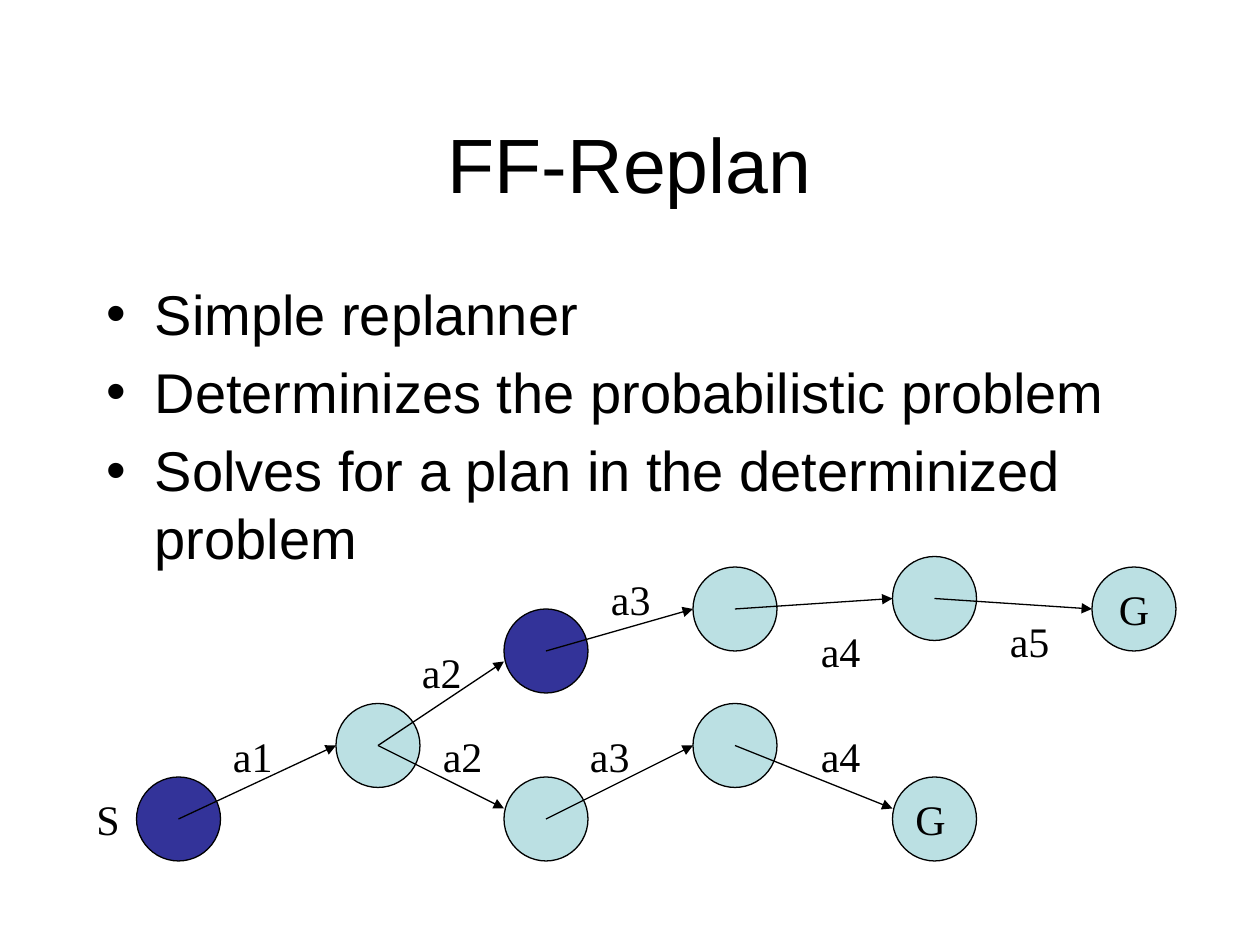
from lxml import etree
from pptx import Presentation
from pptx.dml.color import RGBColor
from pptx.enum.shapes import MSO_CONNECTOR, MSO_SHAPE
from pptx.enum.text import MSO_ANCHOR, MSO_AUTO_SIZE, PP_ALIGN
from pptx.oxml.ns import qn
from pptx.util import Inches, Pt

OVAL = MSO_SHAPE.OVAL
LINE = MSO_CONNECTOR.STRAIGHT
MIDDLE = MSO_ANCHOR.MIDDLE
GROW = MSO_AUTO_SIZE.SHAPE_TO_FIT_TEXT
LEFT, CENTER = PP_ALIGN.LEFT, PP_ALIGN.CENTER
BLACK = RGBColor(0x00, 0x00, 0x00)
NAVY = RGBColor(0x33, 0x33, 0x99)
PALE = RGBColor(0xBB, 0xE0, 0xE3)
SANS, SERIF = "Arial", "Times New Roman"

TITLE = "FF-Replan"
BULLETS = [
    "Simple replanner",
    "Determinizes the probabilistic problem",
    "Solves for a plan in the determinized problem",
]

# The diagram sits on a grid of twelfths of an inch.
UNIT = Inches(1) / 12
SIZE = 8
# name: column, row, fill
NODES = {
    "start": (13, 74, NAVY),
    "fork": (32, 67, PALE),
    "low 1": (48, 74, PALE),
    "low 2": (66, 67, PALE),
    "low goal": (85, 74, PALE),
    "top 1": (48, 58, NAVY),
    "top 2": (66, 54, PALE),
    "top 3": (85, 53, PALE),
    "top goal": (104, 54, PALE),
}
# from, to, rows the tip lies below the target's middle
ARROWS = [
    ("start", "fork", 0),
    ("fork", "low 1", -1),
    ("low 1", "low 2", 0),
    ("low 2", "low goal", -1),
    ("fork", "top 1", 1),
    ("top 1", "top 2", 0),
    ("top 2", "top 3", 0),
    ("top 3", "top goal", 0),
]
# text, column, row, width in inches
LABELS = [
    ("S", 8, 75, 0.39),
    ("G", 86, 75, 0.44),
    ("a1", 21, 69, 0.52),
    ("a2", 41, 69, 0.52),
    ("a3", 55, 69, 0.52),
    ("a4", 77, 69, 0.52),
    ("a2", 39, 61, 0.52),
    ("a3", 57, 54, 0.52),
    ("a4", 77, 59, 0.52),
    ("a5", 95, 58, 0.52),
]


def grid(*cells):
    return [round(cell * UNIT) for cell in cells]


def style(para, face, size, align=LEFT):
    para.alignment = align
    para.font.name = face
    para.font.size = Pt(size)
    para.font.color.rgb = BLACK


def add_bullet(para):
    props = para._p.get_or_add_pPr()
    props.set("marL", str(Inches(0.38)))
    props.set("indent", str(-Inches(0.38)))
    etree.SubElement(props, qn("a:buFont")).set("typeface", SANS)
    mark = etree.SubElement(props, qn("a:buChar"))
    mark.set("char", "•")


def add_text(slide):
    box = slide.shapes.add_textbox(*grid(9, 8, 102, 15))
    frame = box.text_frame
    frame.word_wrap = True
    frame.vertical_anchor = MIDDLE
    frame.text = TITLE
    style(frame.paragraphs[0], SANS, 44, CENTER)

    box = slide.shapes.add_textbox(*grid(9, 26, 102, 54))
    frame = box.text_frame
    frame.word_wrap = True
    frame.text = "\n".join(BULLETS)
    for para in frame.paragraphs:
        para.space_before = Pt(6.4)
        add_bullet(para)
        style(para, SANS, 32)


def add_node(slide, col, row, fill):
    node = slide.shapes.add_shape(OVAL, *grid(col, row, SIZE, SIZE))
    node.shadow.inherit = False
    node.fill.solid()
    node.fill.fore_color.rgb = fill
    node.line.color.rgb = BLACK
    node.line.width = Pt(0.75)
    return node


def add_arrow(slide, start, end, drop):
    """Run from the middle of one node to the left edge of the next."""
    half = SIZE / 2
    x1, y1, _ = NODES[start]
    x2, y2, _ = NODES[end]
    ends = grid(x1 + half, y1 + half, x2, y2 + half + drop)
    arrow = slide.shapes.add_connector(LINE, *ends)
    arrow.line.color.rgb = BLACK
    arrow.line.width = Pt(0.75)
    tip = etree.SubElement(arrow.line._get_or_add_ln(), qn("a:tailEnd"))
    tip.set("type", "triangle")
    etree.SubElement(arrow._element.spPr, qn("a:effectLst"))


def add_label(slide, text, col, row, width):
    box = slide.shapes.add_textbox(*grid(col, row), Inches(width), Inches(0.5))
    frame = box.text_frame
    frame.word_wrap = False
    frame.auto_size = GROW
    frame.text = text
    style(frame.paragraphs[0], SERIF, 24)


def main():
    deck = Presentation()
    deck.slide_width, deck.slide_height = Inches(10), Inches(7.5)
    slide = deck.slides.add_slide(deck.slide_layouts[6])
    add_text(slide)
    nodes = {name: add_node(slide, *node) for name, node in NODES.items()}
    frame = nodes["top goal"].text_frame
    frame.word_wrap = False
    frame.vertical_anchor = MIDDLE
    frame.text = "G"
    style(frame.paragraphs[0], SERIF, 24, CENTER)
    for arrow in ARROWS:
        add_arrow(slide, *arrow)
    for label in LABELS:
        add_label(slide, *label)
    deck.save("out.pptx")


if __name__ == "__main__":
    main()
